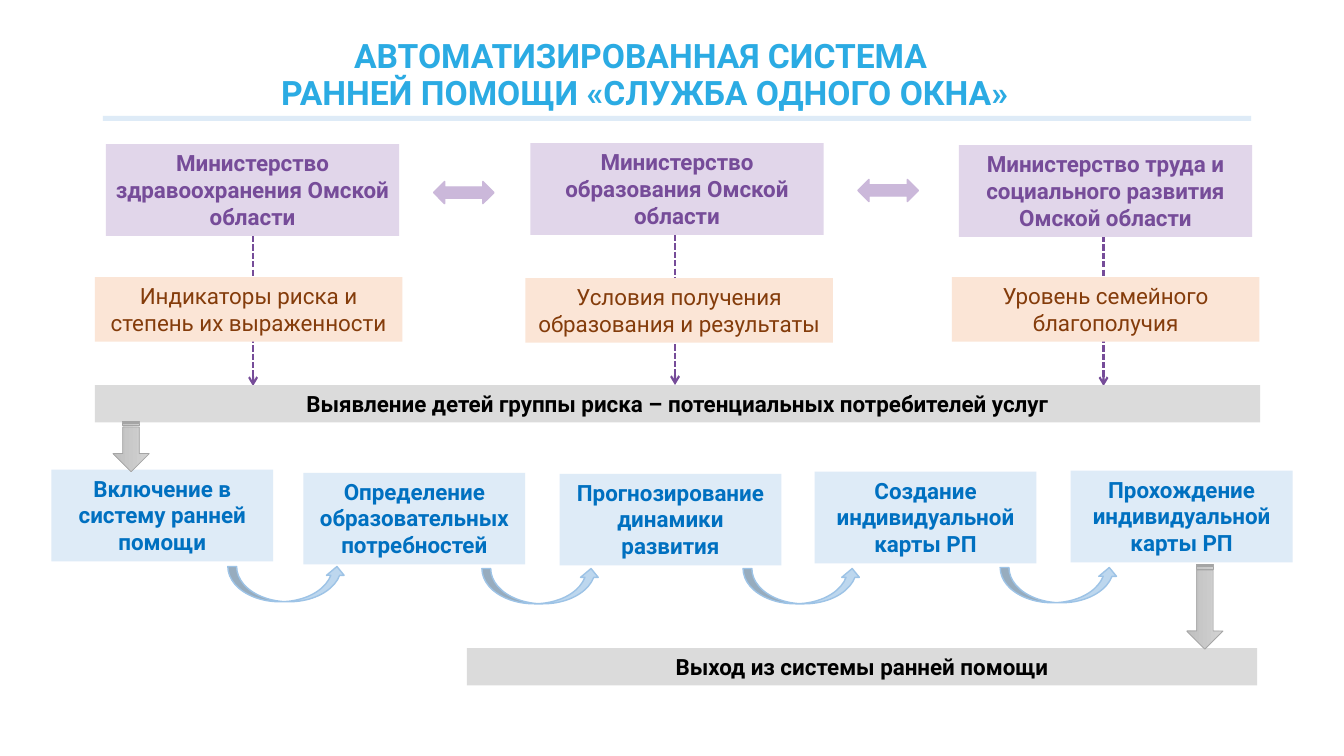
import pptx
import pptx.util
import pptx.dml.color
import pptx.enum.dml
import pptx.enum.shapes
import pptx.enum.text
import pptx.oxml
import pptx.oxml.ns

COLUMNS, ROWS = 133.3, 75
FONT = "Roboto"
SHAPES = pptx.enum.shapes.MSO_SHAPE
PURPLE, LILAC, MAUVE = "764C99", "E1D6EA", "CBB8DA"
PEACH, BROWN = "FBE5D6", "843C0B"
PALE_BLUE, BLUE, SKY = "DEEBF7", "0070C0", "2BABE3"
GREY, BLACK = "DBDBDB", "000000"

MINISTRIES = [
    (10.5, 14.3, "Министерство здравоохранения Омской области"),
    (52.6, 14.2, "Министерство образования Омской области"),
    (95.1, 14.4, "Министерство труда и социального развития Омской области"),
]
CRITERIA = [
    (9.4, 27.5, "Индикаторы риска и степень их выраженности"),
    (52.1, 27.6, "Условия получения образования и результаты"),
    (94.4, 27.5, "Уровень семейного благополучия"),
]
STAGES = [
    (5.1, 46.6, "Включение в систему ранней помощи"),
    (30.1, 46.9, "Определение образовательных потребностей"),
    (55.5, 47, "Прогнозирование динамики развития"),
    (80.8, 46.8, "Создание индивидуальной карты РП"),
    (106.2, 46.7, "Прохождение индивидуальной карты РП"),
]
DETECTION = "Выявление детей группы риска – потенциальных потребителей услуг"
EXIT = "Выход из системы ранней помощи"
TITLE = ["АВТОМАТИЗИРОВАННАЯ СИСТЕМА ", "РАННЕЙ ПОМОЩИ «СЛУЖБА ОДНОГО ОКНА»"]


def color(value):
    """Turn a hex string into a colour."""
    return pptx.dml.color.RGBColor.from_string(value)


def cells(*counts):
    """Turn counts of grid cells, ten to the inch, into lengths."""
    return [pptx.util.Inches(count / 10) for count in counts]


def write(frame, lines, size, ink, bold, spacing=1.0):
    """Write centred lines into a text frame."""
    frame.word_wrap = True
    for index, line in enumerate(lines):
        paragraph = frame.add_paragraph() if index else frame.paragraphs[0]
        paragraph.alignment = pptx.enum.text.PP_ALIGN.CENTER
        paragraph.line_spacing = spacing
        run = paragraph.add_run()
        run.text = line
        run.font.name = FONT
        run.font.size = pptx.util.Pt(size)
        run.font.bold = bold
        run.font.color.rgb = color(ink)


def add_figure(slide, kind, area, fill, outline=None, weight=1):
    """Add a flat preset shape."""
    figure = slide.shapes.add_shape(kind, *cells(*area))
    figure.shadow.inherit = False
    figure.fill.solid()
    figure.fill.fore_color.rgb = color(fill)
    if outline:
        figure.line.color.rgb = color(outline)
        figure.line.width = pptx.util.Pt(weight)
    else:
        figure.line.fill.background()
    return figure


def add_box(slide, area, text, fill, ink, bold=True):
    """Add a filled box with a caption."""
    box = add_figure(slide, SHAPES.RECTANGLE, area, fill)
    box.text_frame.vertical_anchor = pptx.enum.text.MSO_ANCHOR.TOP
    write(box.text_frame, [text], 16, ink, bold)


def add_title(slide):
    """Add the heading and the rule below it."""
    heading = slide.shapes.add_textbox(*cells(9.2, 3.2, 109.5, 8.7))
    heading.text_frame.vertical_anchor = pptx.enum.text.MSO_ANCHOR.MIDDLE
    write(heading.text_frame, TITLE, 24, SKY, True, 0.9)
    add_figure(slide, SHAPES.RECTANGLE, (10.2, 11.5, 113.9, 0.5), PALE_BLUE)


def add_flow_line(slide, column, top):
    """Add a dashed arrow from a ministry down to detection."""
    ends = cells(column, top, column, top + 14.9)
    flow = slide.shapes.add_connector(pptx.enum.shapes.MSO_CONNECTOR.STRAIGHT, *ends)
    flow.line.color.rgb = color(PURPLE)
    flow.line.width = pptx.util.Pt(1.5)
    flow.line.dash_style = pptx.enum.dml.MSO_LINE.SQUARE_DOT
    head = pptx.oxml.parse_xml(
        f'<a:tailEnd {pptx.oxml.ns.nsdecls("a")} type="arrow"/>')
    flow.line._get_or_add_ln().append(head)
    effects = pptx.oxml.parse_xml(f'<a:effectLst {pptx.oxml.ns.nsdecls("a")}/>')
    flow._element.spPr.append(effects)


def add_down_arrow(slide, area):
    """Add a striped grey arrow turned to point down."""
    arrow = add_figure(slide, SHAPES.STRIPED_RIGHT_ARROW, area, GREY, "A5A5A5", 0.5)
    arrow.rotation = 90
    arrow.adjustments[0] = 0.455
    arrow.adjustments[1] = 0.5
    arrow.fill.gradient()
    arrow.fill.gradient_angle = 270
    for stop, (position, shade) in zip(
            arrow.fill.gradient_stops, [(0, "D2D2D2"), (1, "C0C0C0")]):
        stop.position = position
        stop.color.rgb = color(shade)


def main():
    """Build the slide and save it."""
    deck = pptx.Presentation()
    deck.slide_width, deck.slide_height = cells(COLUMNS, ROWS)
    slide = deck.slides.add_slide(deck.slide_layouts[6])

    for column, top in [(109.45, 23.4), (66.95, 23.3), (25.1, 23.4)]:
        add_flow_line(slide, column, top)
    add_title(slide)

    for left, top, ministry in MINISTRIES:
        add_box(slide, (left, top, 29.1, 9.1), ministry, LILAC, PURPLE)
    for left, top in [(43, 18), (85.1, 17.8)]:
        add_figure(slide, SHAPES.LEFT_RIGHT_ARROW, (left, top, 6, 2.2), MAUVE, MAUVE)
    for left, top, criterion in CRITERIA:
        add_box(slide, (left, top, 30.5, 6.4), criterion, PEACH, BROWN, False)

    add_box(slide, (9.4, 38.2, 115.6, 3.7), DETECTION, GREY, BLACK)
    for left, top, stage in STAGES:
        add_box(slide, (left, top, 22, 9.1), stage, PALE_BLUE, BLUE)
    add_box(slide, (46.3, 64.3, 78.4, 3.7), EXIT, GREY, BLACK)

    add_down_arrow(slide, (10.5, 42.5, 5, 3.6))
    add_down_arrow(slide, (115.3, 58.4, 8.4, 3.6))
    for left, top in [(22.6, 56.2), (47.8, 56.4), (73.7, 56.4), (99.2, 56.3)]:
        add_figure(slide, SHAPES.CURVED_UP_ARROW, (left, top, 11.7, 3.5),
                   "BDD7EE", "9DC3E6")
    deck.save("out.pptx")


if __name__ == "__main__":
    main()
